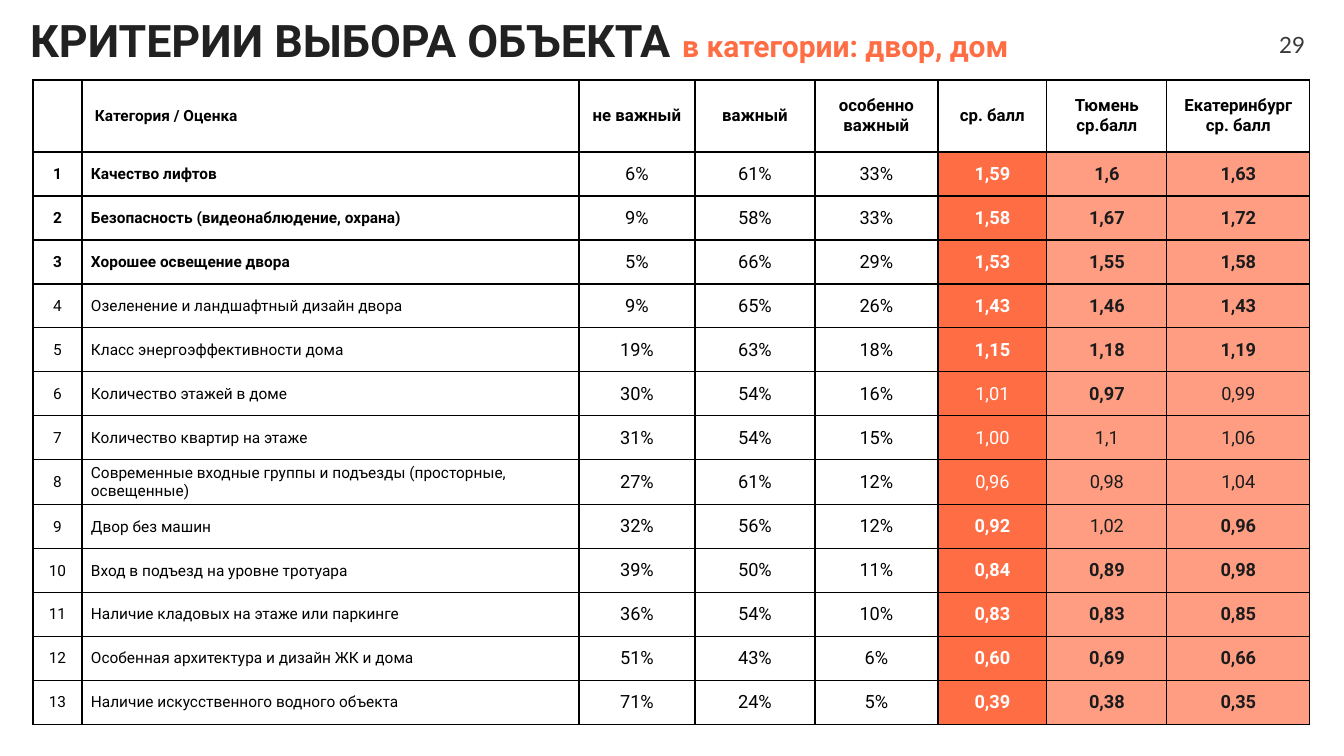
from lxml import etree
from pptx import Presentation
from pptx.dml.color import RGBColor
from pptx.enum.text import MSO_ANCHOR, PP_ALIGN
from pptx.oxml.ns import qn
from pptx.util import Emu, Pt

# Content
TITLE = [("КРИТЕРИИ ВЫБОРА ОБЪЕКТА ", 32, "212121"),
         ("в категории: двор, дом", 21.4, "FF6D44")]
PAGE_NUMBER = "29"
HEADER = ["", "Категория / Оценка", "не важный", "важный", "особенно\nважный",
          "ср. балл", "Тюмень ср.балл", "Екатеринбург\nср. балл"]
CRITERIA = [
    ("Качество лифтов", "6%", "61%", "33%", "1,59", "1,6", "1,63"),
    ("Безопасность (видеонаблюдение, охрана)", "9%", "58%", "33%", "1,58", "1,67", "1,72"),
    ("Хорошее освещение двора", "5%", "66%", "29%", "1,53", "1,55", "1,58"),
    ("Озеленение и ландшафтный дизайн двора", "9%", "65%", "26%", "1,43", "1,46", "1,43"),
    ("Класс энергоэффективности дома", "19%", "63%", "18%", "1,15", "1,18", "1,19"),
    ("Количество этажей в доме", "30%", "54%", "16%", "1,01", "0,97", "0,99"),
    ("Количество квартир на этаже", "31%", "54%", "15%", "1,00", "1,1", "1,06"),
    ("Современные входные группы и подъезды (просторные, освещенные)",
     "27%", "61%", "12%", "0,96", "0,98", "1,04"),
    ("Двор без машин", "32%", "56%", "12%", "0,92", "1,02", "0,96"),
    ("Вход в подъезд на уровне тротуара", "39%", "50%", "11%", "0,84", "0,89", "0,98"),
    ("Наличие кладовых на этаже или паркинге", "36%", "54%", "10%", "0,83", "0,83", "0,85"),
    ("Особенная архитектура и дизайн ЖК и дома", "51%", "43%", "6%", "0,60", "0,69", "0,66"),
    ("Наличие искусственного водного объекта", "71%", "24%", "5%", "0,39", "0,38", "0,35"),
]
TOP_CRITERIA = 3
NAME_COLUMN, SCORE_COLUMN = 1, 5
REGULAR_SCORES = {6: (5, 7), 7: (5, 6, 7), 8: (5, 6, 7), 9: (6,)}

# Layout in px
SLIDE_SIZE = (1344, 756)
TITLE_BOX = (17, 0, 1236, 98)
NUMBER_BOX = (1249, 26, 56, 41)
TABLE_LEFT, TABLE_TOP = 33, 80
COLUMN_WIDTHS = [49, 497, 116, 120, 123, 109, 120, 143]
HEADER_HEIGHT, ROW_HEIGHT = 72, 44
WIDE_INSET, INSET, VERTICAL_INSET = 13, 9, 4


def px(value):
    return Emu(round(value * 914400 / 100.8))


def color(value):
    return RGBColor.from_string(value)


def style_run(run, size, ink, bold, font="Roboto"):
    run.font.name = font
    run.font.size = Pt(size)
    run.font.bold = bold
    run.font.color.rgb = color(ink)


def add_text_box(slide, box, inset):
    frame = slide.shapes.add_textbox(*map(px, box)).text_frame
    frame.word_wrap = True
    frame.margin_left = frame.margin_right = px(inset)
    frame.margin_top = frame.margin_bottom = px(inset)
    return frame


def add_borders(cell):
    properties = cell._tc.get_or_add_tcPr()
    for index, side in enumerate(("a:lnL", "a:lnR", "a:lnT", "a:lnB")):
        line = etree.Element(qn(side), w=str(Pt(1)))
        fill = etree.SubElement(line, qn("a:solidFill"))
        etree.SubElement(fill, qn("a:srgbClr"), val="000000")
        properties.insert(index, line)


def cell_style(row, column):
    """Return size, text colour, bold and fill of one cell."""
    if row == 0:
        return (11 if column == NAME_COLUMN else 12), "000000", True, None
    if column <= NAME_COLUMN:
        return 11, "000000", row <= TOP_CRITERIA, None
    if column < SCORE_COLUMN:
        return 13, "000000", False, None
    bold = column not in REGULAR_SCORES.get(row, ())
    if column == SCORE_COLUMN:
        return 13, "FFFFFF", bold, "FF6D44"
    return 13, "1C1C1C", bold, "FF9D82"


def fill_cell(cell, text, row, column):
    size, ink, bold, background = cell_style(row, column)
    cell.vertical_anchor = MSO_ANCHOR.MIDDLE
    inset = WIDE_INSET if row == 0 or column == 0 else INSET
    cell.margin_left = cell.margin_right = px(inset)
    cell.margin_top = cell.margin_bottom = px(VERTICAL_INSET)
    if background:
        cell.fill.solid()
        cell.fill.fore_color.rgb = color(background)
    else:
        cell.fill.background()
    add_borders(cell)
    cell.text_frame.text = text
    for paragraph in cell.text_frame.paragraphs:
        paragraph.alignment = PP_ALIGN.LEFT if column == NAME_COLUMN else PP_ALIGN.CENTER
        for run in paragraph.runs:
            style_run(run, size, ink, bold)


def add_criteria_table(slide):
    rows = [HEADER] + [(str(number), *criterion)
                       for number, criterion in enumerate(CRITERIA, 1)]
    height = HEADER_HEIGHT + ROW_HEIGHT * len(CRITERIA)
    table = slide.shapes.add_table(
        len(rows), len(HEADER), px(TABLE_LEFT), px(TABLE_TOP),
        px(sum(COLUMN_WIDTHS)), px(height)).table
    table.first_row = table.horz_banding = False
    for column, width in zip(table.columns, COLUMN_WIDTHS):
        column.width = px(width)
    for row, texts in enumerate(rows):
        table.rows[row].height = px(ROW_HEIGHT if row else HEADER_HEIGHT)
        for column, text in enumerate(texts):
            fill_cell(table.cell(row, column), text, row, column)


def main():
    presentation = Presentation()
    presentation.slide_width, presentation.slide_height = map(px, SLIDE_SIZE)
    slide = presentation.slides.add_slide(presentation.slide_layouts[6])

    # Title
    paragraph = add_text_box(slide, TITLE_BOX, WIDE_INSET).paragraphs[0]
    for text, size, ink in TITLE:
        run = paragraph.add_run()
        run.text = text
        style_run(run, size, ink, True)

    # Table of criteria
    add_criteria_table(slide)

    # Page number
    frame = add_text_box(slide, NUMBER_BOX, 0)
    frame.vertical_anchor = MSO_ANCHOR.MIDDLE
    frame.text = PAGE_NUMBER
    paragraph = frame.paragraphs[0]
    paragraph.alignment = PP_ALIGN.RIGHT
    paragraph.line_spacing = 0.9
    style_run(paragraph.runs[0], 16, "393939", False, "Lato")

    presentation.save("out.pptx")


if __name__ == "__main__":
    main()
